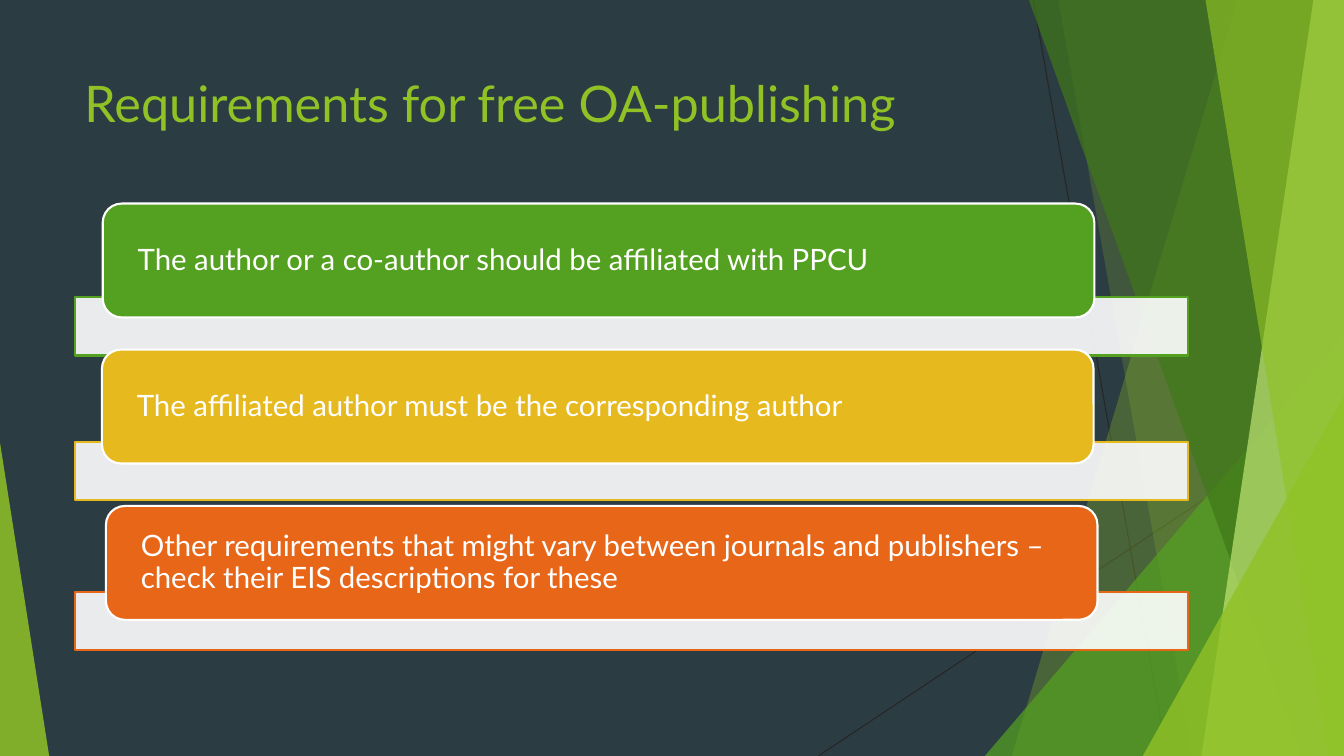
from dataclasses import dataclass

import pptx
import pptx.dml.color
import pptx.enum.shapes
import pptx.enum.text
import pptx.oxml
import pptx.oxml.ns
import pptx.util

Cm = pptx.util.Cm
Pt = pptx.util.Pt
SHAPES = pptx.enum.shapes.MSO_SHAPE
ANCHOR = pptx.enum.text.MSO_ANCHOR


@dataclass(frozen=True)
class Theme:
    font: str = "Lato"
    title_size: float = 36
    card_size: float = 21
    outline: float = 1.5
    hairline: float = 0.75
    background: str = "2C3C43"
    lime: str = "90C226"
    green: str = "54A021"
    forest: str = "3F7819"
    pale_lime: str = "C0E474"
    yellow: str = "E6B91E"
    orange: str = "E76618"
    white: str = "FFFFFF"
    ray: str = "262626"


@dataclass(frozen=True)
class Box:
    """A region of the slide, in centimetres."""
    left: float
    top: float
    width: float
    height: float

    @property
    def right(self):
        return self.left + self.width

    @property
    def bottom(self):
        return self.top + self.height

    def lengths(self):
        return Cm(self.left), Cm(self.top), Cm(self.width), Cm(self.height)


THEME = Theme()
PAGE = Box(0, 0, 33.87, 19.05)

REQUIREMENTS = [
    # text, colour, bar top, card left, card top (relative to the list)
    ("The author or a co-author should be affiliated with PPCU",
     THEME.green, 2.36, 0.71, 0),
    ("The affiliated author must be the corresponding author",
     THEME.yellow, 6.0, 0.69, 3.68),
    ("Other requirements that might vary between journals and publishers – "
     "check their EIS descriptions for these",
     THEME.orange, 9.78, 0.79, 7.62),
]


def rgb(colour):
    return pptx.dml.color.RGBColor.from_string(colour)


def paint(shape, colour, opacity=100, outline=None):
    shape.shadow.inherit = False
    shape.fill.solid()
    shape.fill.fore_color.rgb = rgb(colour)
    if opacity < 100:
        tint = shape.element.spPr.find(".//" + pptx.oxml.ns.qn("a:srgbClr"))
        alpha = pptx.oxml.parse_xml(
            f'<a:alpha {pptx.oxml.ns.nsdecls("a")} val="{opacity * 1000}"/>')
        tint.append(alpha)
    if outline:
        shape.line.color.rgb = rgb(outline)
        shape.line.width = Pt(THEME.outline)
    else:
        shape.line.fill.background()


def write(frame, text, size, colour, anchor):
    frame.word_wrap = True
    frame.vertical_anchor = anchor
    paragraph = frame.paragraphs[0]
    paragraph.alignment = pptx.enum.text.PP_ALIGN.LEFT
    run = paragraph.add_run()
    run.text = text
    run.font.name = THEME.font
    run.font.size = Pt(size)
    run.font.color.rgb = rgb(colour)
    return paragraph


def add_ray(slide, start, end):
    ray = slide.shapes.add_connector(
        pptx.enum.shapes.MSO_CONNECTOR.STRAIGHT,
        *(Cm(value) for value in (*start, *end)))
    ray.line.color.rgb = rgb(THEME.ray)
    ray.line.width = Pt(THEME.hairline)
    ray.element.spPr.append(
        pptx.oxml.parse_xml(f'<a:effectLst {pptx.oxml.ns.nsdecls("a")}/>'))


def add_facet(slide, box, top_reach, bottom_reach, colour, opacity):
    """Full-height facet reaching left from the right edge of the box."""
    corners = [(box.right - top_reach, box.top), (box.right, box.top),
               (box.right, box.bottom), (box.right - bottom_reach, box.bottom)]
    start, *others = [(Cm(x), Cm(y)) for x, y in corners]
    builder = slide.shapes.build_freeform(*start)
    builder.add_line_segments(others, close=True)
    paint(builder.convert_to_shape(), colour, opacity)


def add_corner(slide, box, width, height, colour, opacity, on_right=True):
    """Right triangle standing in a bottom corner of the box."""
    left = box.right - width if on_right else box.left
    place = Box(left, box.bottom - height, width, height)
    corner = slide.shapes.add_shape(SHAPES.ISOSCELES_TRIANGLE, *place.lengths())
    corner.adjustments[0] = 1 if on_right else 0
    paint(corner, colour, opacity)


def add_backdrop(slide, box):
    slide.background.fill.solid()
    slide.background.fill.fore_color.rgb = rgb(THEME.background)
    add_ray(slide, (box.right - 7.83, box.top), (box.right - 4.46, box.bottom))
    add_ray(slide, (box.right, box.top + 10.24), (box.right - 13.25, box.bottom))
    add_facet(slide, box, 2.68, 8.37, THEME.lime, 30)
    add_facet(slide, box, 7.2, 3.82, THEME.lime, 20)
    add_corner(slide, box, 9.05, 10.59, THEME.green, 72)
    add_facet(slide, box, 7.94, 1.08, THEME.forest, 70)
    add_facet(slide, box, 0.77, 3.59, THEME.pale_lime, 70)
    add_facet(slide, box, 3.49, 0.39, THEME.lime, 65)
    add_corner(slide, box, 5.07, 9.07, THEME.lime, 80)
    add_corner(slide, box, 1.24, 7.9, THEME.lime, 85, on_right=False)


def add_title(slide, box, text):
    title = slide.shapes.add_textbox(*box.lengths())
    write(title.text_frame, text, THEME.title_size, THEME.lime, ANCHOR.TOP)


def add_requirements(slide, box, requirements):
    for text, colour, bar_top, card_left, card_top in requirements:
        bar_box = Box(box.left, box.top + bar_top, box.width, 1.47)
        bar = slide.shapes.add_shape(SHAPES.RECTANGLE, *bar_box.lengths())
        paint(bar, THEME.white, 90, outline=colour)

        card_box = Box(box.left + card_left, box.top + card_top, 24.99, 2.87)
        card = slide.shapes.add_shape(SHAPES.ROUNDED_RECTANGLE, *card_box.lengths())
        paint(card, colour, outline=THEME.white)
        frame = card.text_frame
        frame.margin_left = frame.margin_right = Cm(0.74)
        frame.margin_top = frame.margin_bottom = 0
        paragraph = write(frame, text, THEME.card_size, THEME.white, ANCHOR.MIDDLE)
        paragraph.line_spacing = 0.9


def main():
    deck = pptx.Presentation()
    deck.slide_width, deck.slide_height = Cm(PAGE.width), Cm(PAGE.height)
    slide = deck.slides.add_slide(deck.slide_layouts[6])
    add_backdrop(slide, PAGE)
    add_title(slide, Box(1.88, 1.7, 23.88, 2.46),
              "Requirements for free OA-publishing")
    add_requirements(slide, Box(1.88, 5.13, 28.07, 11.25), REQUIREMENTS)
    deck.save("out.pptx")


if __name__ == "__main__":
    main()
